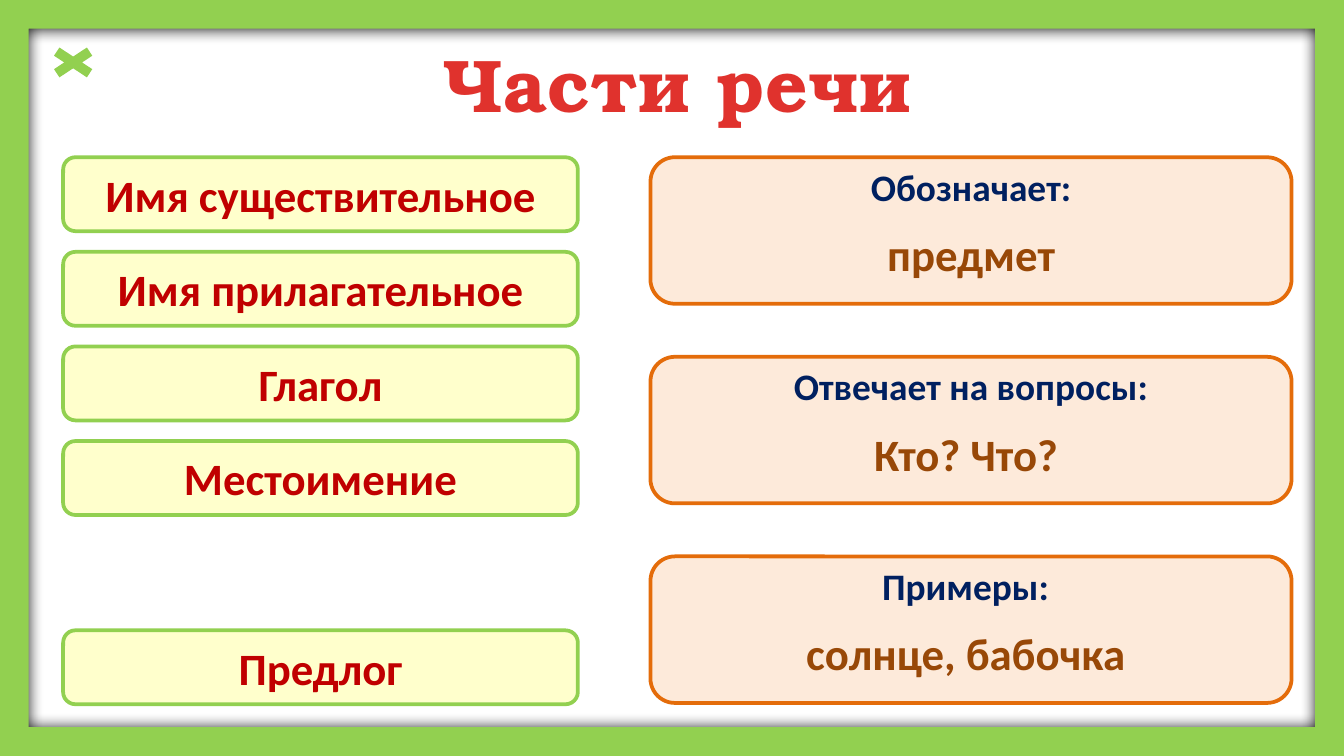
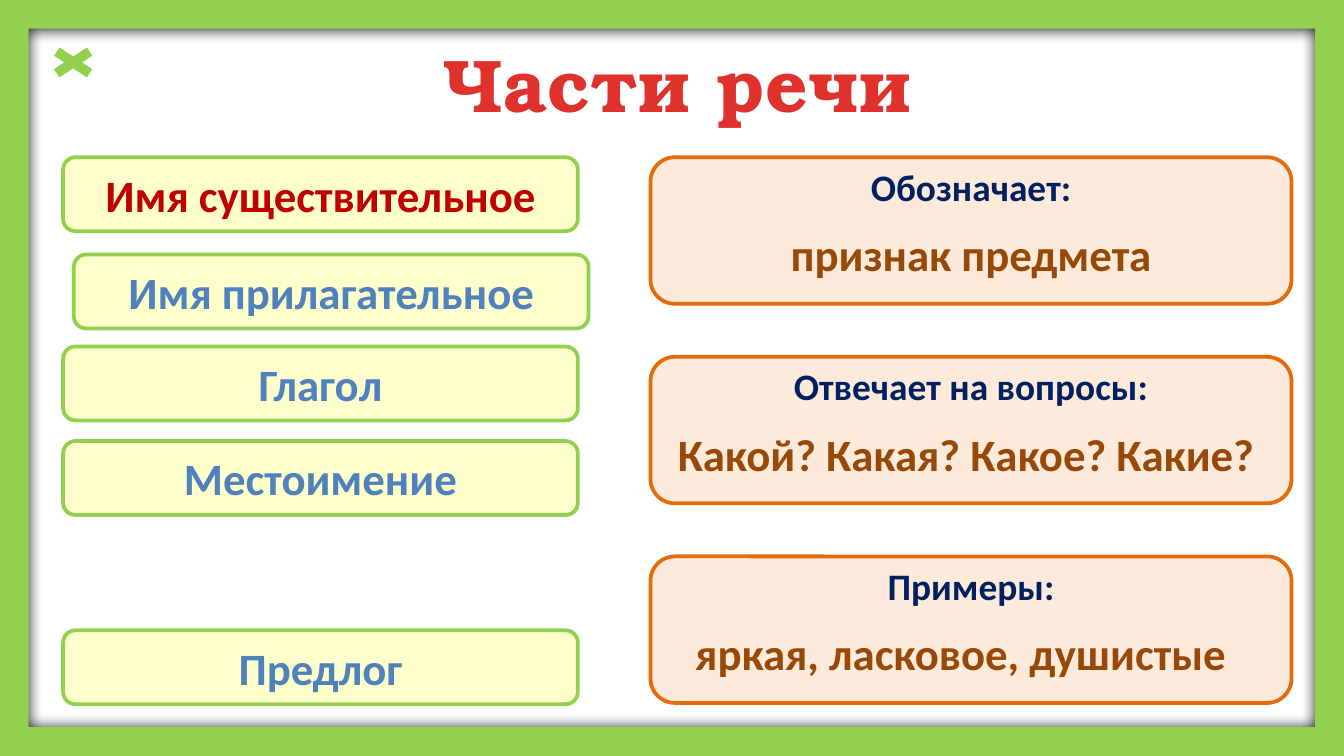
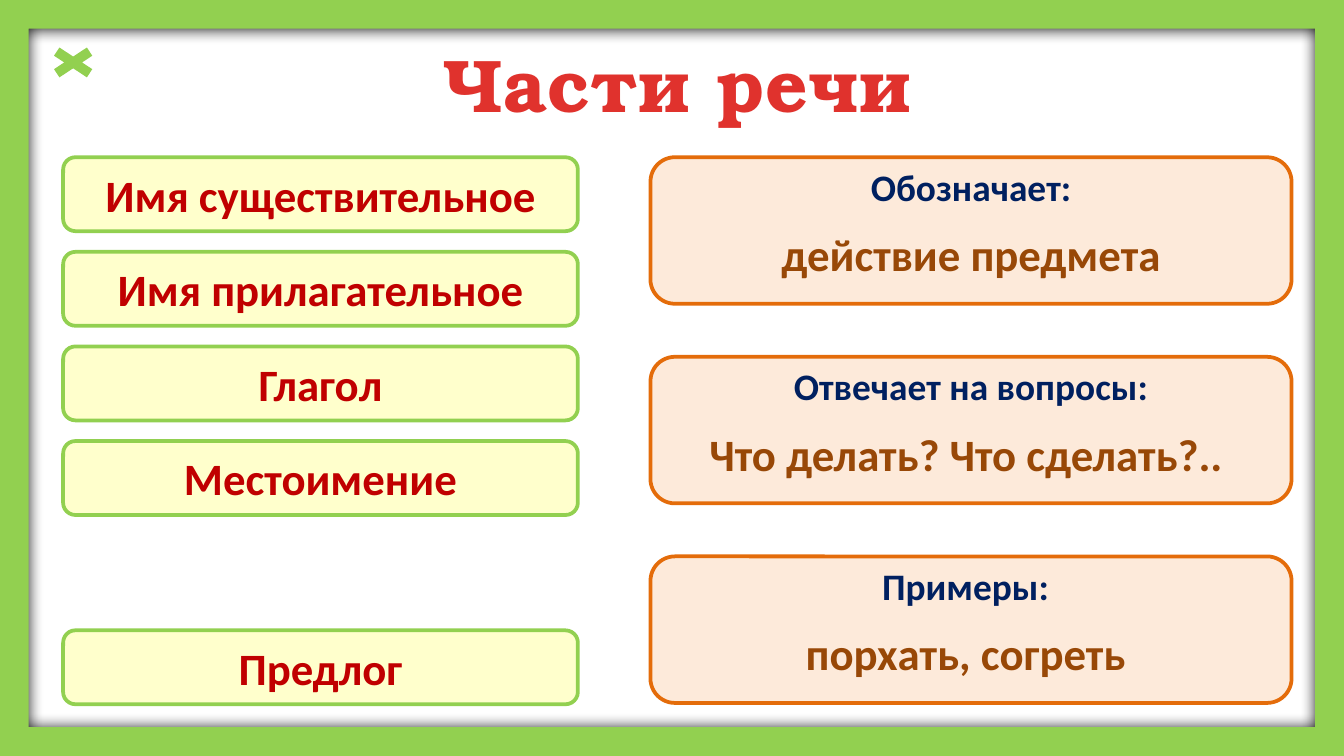
from dataclasses import dataclass

from lxml import etree
from pptx import Presentation
from pptx import util as u
from pptx.dml.color import RGBColor
from pptx.enum import shapes, text
from pptx.oxml import ns

COLORS = {
    "green": "92D050",
    "title_top": "E0322D",
    "title_bottom": "A2201C",
    "card": "FDEADA",
    "card_line": "E46C0A",
    "label": "002060",
    "answer": "984807",
    "button": "FFFFCC",
    "red": "C00000",
    "blue": "4F81BD",
    "shadow": "000000",
}
FONT, TITLE_FONT = "Calibri", "TeX Gyre Bonum"
SHAPE = shapes.MSO_SHAPE
WIDTH = 10
HEIGHT = WIDTH * 9 / 16

TOP = 1.17
BUTTON_LEFT, BUTTON_W, BUTTON_H, BUTTON_PITCH = 0.47, 3.83, 0.55, 3.52 / 5
CARD_LEFT, CARD_W, CARD_H, CARD_PITCH = 4.84, 4.77, 1.09, 2.97 / 2
CARD_PAD, LABEL_H, ANSWER_DROP, ANSWER_H = 0.08, 0.44, 0.47, 0.5


@dataclass
class Box:
    left: float
    top: float
    width: float
    height: float

    def lengths(self) -> list:
        return [u.Inches(v) for v in (self.left, self.top, self.width, self.height)]


@dataclass
class Button:
    label: str
    row: int
    color: str = "red"
    dx: float = 0
    dy: float = 0


@dataclass
class Topic:
    meaning: str
    questions: str
    examples: str
    buttons: list[Button]
    examples_label_w: float = 4.53


def rgb(name: str) -> RGBColor:
    return RGBColor.from_string(COLORS[name])


def write(tf, words: str, size: float, color: str) -> None:
    tf.word_wrap = True
    tf.text = words
    p = tf.paragraphs[0]
    p.alignment = text.PP_ALIGN.CENTER
    font = p.runs[0].font
    font.name, font.size, font.bold = FONT, u.Pt(size), True
    font.color.rgb = rgb(color)


def add_text(s, box: Box, words: str, size: float, color: str) -> None:
    tf = s.shapes.add_textbox(*box.lengths()).text_frame
    write(tf, words, size, color)
    tf.auto_size = text.MSO_AUTO_SIZE.SHAPE_TO_FIT_TEXT


def add_panel(s, kind, box: Box, fill: str, line: str | None = None):
    sp = s.shapes.add_shape(kind, *box.lengths())
    sp.shadow.inherit = False
    sp.fill.solid()
    sp.fill.fore_color.rgb = rgb(fill)
    if line:
        sp.line.color.rgb = rgb(line)
        sp.line.width = u.Pt(2)
    else:
        sp.line.fill.background()
    return sp


def add_frame(s, layout) -> None:
    """Draw the green frame and hand it to the layout all slides share."""
    frame = add_panel(s, SHAPE.FRAME, Box(0, 0, WIDTH, HEIGHT), "green")
    frame.adjustments[0] = 0.038
    effects = frame.element.spPr.find(ns.qn("a:effectLst"))
    shadow = etree.SubElement(effects, ns.qn("a:outerShdw"), blurRad=str(u.Pt(8.5)),
                              dist=str(u.Pt(1)), dir=str(90 * 60000), rotWithShape="0")
    etree.SubElement(shadow, ns.qn("a:srgbClr"), val=COLORS["shadow"])
    for ph in list(layout.placeholders):
        if ph.placeholder_format.type != shapes.PP_PLACEHOLDER.TITLE:
            ph.element.getparent().remove(ph.element)
    layout.shapes.element.insert(2, frame.element)


def set_title(s) -> None:
    sp = s.shapes.title
    sp.left, sp.top, sp.width, sp.height = Box(1.8, 0.23, 6.48, 0.77).lengths()
    tf = sp.text_frame
    write(tf, "Части речи", 40, "title_top")
    tf.vertical_anchor = text.MSO_ANCHOR.TOP
    tf.auto_size = text.MSO_AUTO_SIZE.SHAPE_TO_FIT_TEXT
    r = tf.paragraphs[0].runs[0]
    r.font.name = TITLE_FONT
    r.font.fill.gradient()
    r.font.fill.gradient_angle = 270
    stops = ((0.25, "title_top"), (1, "title_bottom"))
    for stop, (position, color) in zip(r.font.fill.gradient_stops, stops):
        stop.position = position
        stop.color.rgb = rgb(color)
    r.font._element.set("spc", "50")


def add_card(s, row: int, label: str, answer: str, label_w: float, answer_box: Box) -> None:
    top = TOP + row * CARD_PITCH
    add_panel(s, SHAPE.ROUNDED_RECTANGLE, Box(CARD_LEFT, top, CARD_W, CARD_H),
              "card", "card_line")
    add_text(s, Box(CARD_LEFT + CARD_PAD, top, label_w, LABEL_H), label, 20, "label")
    add_text(s, answer_box, answer, 24, "answer")


def add_cards(s, topic: Topic) -> None:
    inner_w = CARD_W - 2 * CARD_PAD
    inner_left = CARD_LEFT + CARD_PAD
    rows = (
        ("Обозначает:", topic.meaning, inner_w, inner_left, inner_w),
        ("Отвечает на вопросы:", topic.questions, inner_w, inner_left, inner_w),
        ("Примеры:", topic.examples, topic.examples_label_w, CARD_LEFT, CARD_W - CARD_PAD),
    )
    for row, (label, answer, label_w, left, width) in enumerate(rows):
        top = TOP + row * CARD_PITCH + ANSWER_DROP
        add_card(s, row, label, answer, label_w, Box(left, top, width, ANSWER_H))


def add_button(s, button: Button) -> None:
    box = Box(BUTTON_LEFT + button.dx, TOP + button.row * BUTTON_PITCH + button.dy,
              BUTTON_W, BUTTON_H)
    sp = add_panel(s, SHAPE.ROUNDED_RECTANGLE, box, "button", "green")
    write(sp.text_frame, button.label, 24, button.color)
    sp.text_frame.vertical_anchor = text.MSO_ANCHOR.MIDDLE


def parts_of_speech(others: str = "red", dx: float = 0, dy: float = 0) -> list[Button]:
    """The button column; dx and dy move the adjective button."""
    return [
        Button("Имя существительное", 0),
        Button("Глагол", 2, others),
        Button("Местоимение", 3, others),
        Button("Предлог", 5, others),
        Button("Имя прилагательное", 1, others, dx, dy),
    ]


TOPICS = [
    Topic("предмет", "Кто? Что? ", "солнце, бабочка", parts_of_speech()),
    Topic("признак предмета", "Какой? Какая? Какое? Какие? ", "яркая, ласковое, душистые ",
          parts_of_speech("blue", 0.08, 0.02), examples_label_w=4.61),
    Topic("действие предмета", "Что делать? Что сделать?.. ", "порхать, согреть",
          parts_of_speech()),
]


def main() -> None:
    prs = Presentation()
    prs.slide_width, prs.slide_height = u.Inches(WIDTH), u.Inches(HEIGHT)
    layout = prs.slide_layouts[5]
    for i, topic in enumerate(TOPICS):
        s = prs.slides.add_slide(layout)
        if i == 0:
            add_frame(s, layout)
        set_title(s)
        add_cards(s, topic)
        for button in topic.buttons:
            add_button(s, button)
        # Cross in the top left corner
        add_panel(s, SHAPE.MATH_MULTIPLY, Box(0.31, 0.31, 0.47, 0.31), "green")
    prs.save("out.pptx")


if __name__ == "__main__":
    main()
